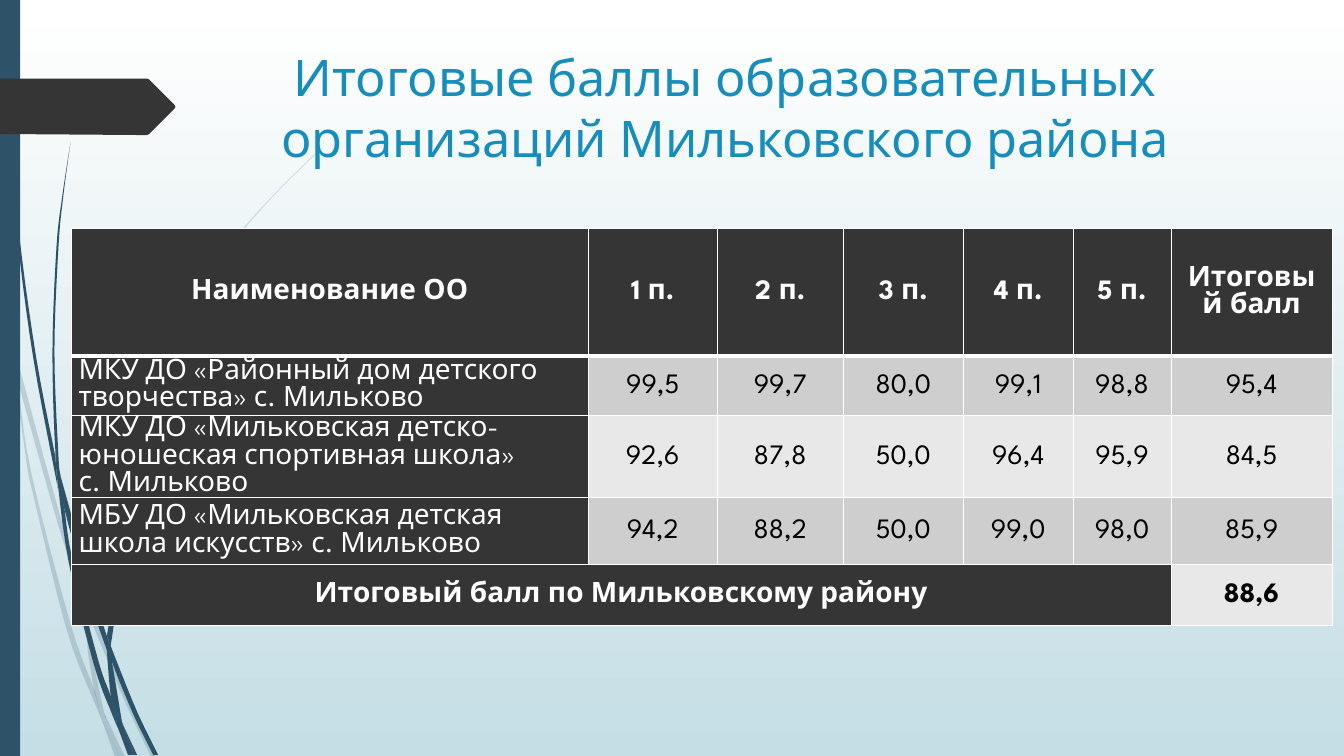
"""Build a slide with the final scores of the Milkovo district schools."""
import lxml.etree
import pptx
import pptx.dml.color
import pptx.enum.shapes
import pptx.enum.text
import pptx.oxml.ns
import pptx.util

Inches = pptx.util.Inches
Pt = pptx.util.Pt
RGBColor = pptx.dml.color.RGBColor
qn = pptx.oxml.ns.qn
CENTER = pptx.enum.text.PP_ALIGN.CENTER
LEFT = pptx.enum.text.PP_ALIGN.LEFT
MIDDLE = pptx.enum.text.MSO_ANCHOR.MIDDLE
TOP = pptx.enum.text.MSO_ANCHOR.TOP

FONT = "League Spartan"
WHITE = RGBColor(0xFF, 0xFF, 0xFF)
BLACK = RGBColor(0, 0, 0)
SKY = RGBColor(0xC5, 0xDE, 0xE5)
NAVY = RGBColor(0x2E, 0x53, 0x69)
BLUE = RGBColor(0x17, 0x8D, 0xBB)
DARK = RGBColor(0x35, 0x35, 0x35)
BANDS = (RGBColor(0xE8, 0xE8, 0xE8), RGBColor(0xCE, 0xCE, 0xCE))

PALE_STEMS = [
    ([(0, 2.82), (0.09, 3.22), (0.11, 3.5)], [(0.1, 3.44), (0, 2.99)]),
    ([(0.14, 3.45), (0.62, 5.2), (0.85, 5.86)], [(0.84, 5.99), (0.58, 5.22), (0.17, 3.76)]),
    ([(0.88, 5.96), (0.92, 6.07), (1.27, 6.92), (1.55, 7.51)],
     [(1.5, 7.51), (1.23, 6.94), (0.88, 6.1)]),
    ([(1.05, 7.11), (1.24, 7.51)], [(1.19, 7.51)]),
    ([(0.11, 3.5), (0.17, 3.76), (0.31, 4.69), (0.7, 6.19), (0.93, 6.83), (0.99, 7.07), (1.01, 7.14)],
     [(0.92, 6.93), (0.65, 6.21), (0.28, 4.7)]),
    ([(0.84, 5.99), (0.88, 6.08), (0.91, 6.46), (1.03, 7.06), (1.05, 7.11)],
     [(0.96, 6.92), (0.93, 6.83), (0.87, 6.46)]),
    ([(0.88, 5.96), (0.88, 5.84), (1.1, 4.62), (1.6, 3.49), (2.29, 2.45), (2.68, 1.98), (3.12, 1.54)],
     [(3.12, 1.53), (2.68, 1.97), (2.28, 2.44), (1.58, 3.48), (1.07, 4.61), (0.85, 5.84), (0.85, 5.86)]),
    ([(1.01, 7.14), (1.14, 7.51)], [(1.19, 7.51)]),
    ([(0.88, 6.1), (0.88, 5.96), (0.85, 5.86)], [(0.84, 5.99), (0.88, 6.08)]),
    ([(0.93, 6.83), (0.99, 7.07), (1.01, 7.14), (1.19, 7.51)], [(1.05, 7.11), (0.96, 6.92)]),
]
DARK_STEMS = [
    ([(0.03, 0), (0.04, 0.48), (0.07, 1.1), (0.17, 2.33), (0.33, 3.55), (0.56, 4.77), (0.57, 4.81)],
     [(0.55, 4.53), (0.36, 3.55), (0.19, 2.32), (0.08, 1.09), (0.05, 0.48), (0.04, 0)]),
    ([(0.6, 4.72), (0.64, 5.05), (0.88, 5.92), (1.06, 6.45)], [(1.06, 6.31), (0.93, 5.9), (0.6, 4.72)]),
    ([(1.1, 6.41), (1.11, 6.56), (1.32, 7.08), (1.52, 7.49)], [(1.57, 7.49), (1.36, 7.06), (1.13, 6.49)]),
    ([(0.57, 4.77), (0.68, 5.57), (0.93, 6.59), (1.11, 7.08), (1.17, 7.22)],
     [(1.16, 7.17), (1.1, 6.91), (0.98, 6.57), (0.72, 5.56), (0.64, 5.05)]),
    ([(0.6, 4.72), (0.58, 4.53), (0.54, 3.49), (0.58, 2.45), (0.63, 1.93), (0.7, 1.41)],
     [(0.7, 1.41), (0.62, 1.93), (0.56, 2.45), (0.52, 3.49), (0.55, 4.49), (0.6, 4.72)]),
    ([(1.22, 7.19), (1.33, 7.49)], [(1.36, 7.49)]),
    ([(0.55, 4.49), (0.57, 4.77), (0.64, 5.05)], [(0.6, 4.72)]),
    ([(1.1, 6.41), (1.11, 6.33), (1.25, 5.52), (1.58, 4.76), (2.05, 4.06), (2.31, 3.74), (2.61, 3.44)],
     [(2.6, 3.44), (2.31, 3.73), (2.04, 4.05), (1.56, 4.74), (1.22, 5.51), (1.06, 6.31)]),
    ([(1.17, 7.22), (1.27, 7.49)], [(1.31, 7.49)]),
    ([(1.06, 6.45), (1.1, 6.91), (1.16, 7.06), (1.22, 7.19)], [(1.21, 7.16), (1.11, 6.56), (1.09, 6.51)]),
    ([(1.06, 6.45), (1.11, 6.56), (1.1, 6.41)], [(1.06, 6.31)]),
    ([(1.1, 6.91), (1.16, 7.17), (1.17, 7.22), (1.3, 7.49)], [(1.33, 7.49), (1.22, 7.19), (1.16, 7.06)]),
]
ARROW_TAG = [(0, 0.78), (1.46, 0.78), (1.48, 0.79), (1.73, 1.04), (1.74, 1.06),
             (1.73, 1.08), (1.48, 1.33), (1.46, 1.34), (1.36, 1.34), (0, 1.33)]

TITLE = "Итоговые баллы образовательных организаций Мильковского района"
VILLAGE = chr(160).join(("с.", "Мильково"))
COLUMNS = (5.13, 1.28, 1.25, 1.19, 1.09, 0.97, 1.6)
ROWS = (1.26, 0.59, 0.82, 0.66, 0.61)
SCORES = [
    ["Наименование ОО", "1 п.", "2 п.", "3 п.", "4 п.", "5 п.", "Итоговый балл"],
    [f"МКУ ДО «Районный дом детского творчества» {VILLAGE}",
     "99,5", "99,7", "80,0", "99,1", "98,8", "95,4"],
    [f"МКУ ДО «Мильковская детско-юношеская спортивная школа» {VILLAGE}",
     "92,6", "87,8", "50,0", "96,4", "95,9", "84,5"],
    [f"МБУ ДО «Мильковская детская школа искусств» {VILLAGE}",
     "94,2", "88,2", "50,0", "99,0", "98,0", "85,9"],
    ["Итоговый балл по Мильковскому району", "", "", "", "", "", "88,6"],
]


def apply(target, values):
    """Set each named attribute of the target."""
    for name, value in values.items():
        setattr(target, name, value)


def smooth(points, steps=5):
    """Return points of a smooth curve through the given points."""
    padded = [points[0], *points, points[-1]]
    curve = []
    for a, b, c, d in zip(padded, padded[1:], padded[2:], padded[3:]):
        for step in range(steps):
            t = step / steps
            curve.append(tuple(
                q + t / 2 * (r - p + t * (2 * p - 5 * q + 4 * r - s + t * (3 * (q - r) + s - p)))
                for p, q, r, s in zip(a, b, c, d)))
    return curve + [points[-1]]


def paint(shape, color, opacity=100):
    """Give a shape a plain fill with no line or shadow."""
    shape.shadow.inherit = False
    shape.line.fill.background()
    shape.fill.solid()
    shape.fill.fore_color.rgb = color
    if opacity < 100:
        tint = shape._element.spPr.find(qn("a:solidFill"))[0]
        lxml.etree.SubElement(tint, qn("a:alpha"), val=str(opacity * 1000))


def add_outline(page, points, color, opacity=100):
    """Draw a closed filled outline."""
    corners = [(Inches(x), Inches(y)) for x, y in points]
    builder = page.shapes.build_freeform(*corners[0])
    builder.add_line_segments(corners[1:], close=True)
    paint(builder.convert_to_shape(), color, opacity)


def write(frame, text, align, color, font, spacing=None):
    """Write one formatted paragraph into a text frame."""
    para = frame.paragraphs[0]
    apply(para, {"alignment": align, "line_spacing": spacing})
    span = para.add_run()
    span.text = text
    apply(span.font, {"name": FONT, **font})
    span.font.color.rgb = color


def add_title(page):
    """Add the slide title."""
    box = page.shapes.add_textbox(Inches(2.32), Inches(0.41), Inches(9.75), Inches(1.4))
    apply(box.text_frame, {"word_wrap": True, "vertical_anchor": TOP})
    write(box.text_frame, TITLE, CENTER, BLUE, {"size": Pt(36)})


def add_borders(cell, widths):
    """Put white lines round a cell."""
    props = cell._tc.get_or_add_tcPr()
    for index, (side, width) in enumerate(widths.items()):
        line = lxml.etree.Element(qn("a:ln" + side), w=str(Pt(width)))
        fill = lxml.etree.SubElement(line, qn("a:solidFill"))
        lxml.etree.SubElement(fill, qn("a:srgbClr"), val=str(WHITE))
        props.insert(index, line)


def add_scores(page):
    """Add the table of scores."""
    table = page.shapes.add_table(len(ROWS), len(COLUMNS), Inches(0.71), Inches(2.27),
                                  Inches(sum(COLUMNS)), Inches(sum(ROWS))).table
    for column, width in zip(table.columns, COLUMNS):
        column.width = Inches(width)
    last = len(ROWS) - 1
    for r, texts in enumerate(SCORES):
        table.rows[r].height = Inches(ROWS[r])
        for c, text in enumerate(texts):
            cell = table.cell(r, c)
            dark = r == 0 or c == 0
            school = c == 0 and 0 < r < last
            apply(cell, {"vertical_anchor": MIDDLE, "margin_left": Inches(0.07),
                         "margin_right": Inches(0.08), "margin_top": 0, "margin_bottom": 0})
            cell.fill.solid()
            cell.fill.fore_color.rgb = DARK if dark else BANDS[r % 2]
            add_borders(cell, {"L": 1, "R": 1, "T": 3 if r == 1 else 1, "B": 3 if r == 0 else 1})
            if text:
                write(cell.text_frame, text, LEFT if school else CENTER, WHITE if dark else BLACK,
                      {"size": Pt(20), "bold": r in (0, last)}, Pt(19.6) if school else 1.07)
    table.cell(last, 0).merge(table.cell(last, len(COLUMNS) - 2))


def add_background(page):
    """Fill the page from white at the top to pale blue at the bottom."""
    fill = page.background.fill
    fill.gradient()
    fill.gradient_angle = 270
    for stop, color, position in zip(fill.gradient_stops, (WHITE, SKY), (0, 1)):
        stop.color.rgb = color
        stop.position = position


def main():
    """Build and save the deck."""
    deck = pptx.Presentation()
    apply(deck, {"slide_width": Inches(13.33), "slide_height": Inches(7.5)})
    page = deck.slides.add_slide(deck.slide_layouts[6])
    add_background(page)
    for stems, opacity in ((PALE_STEMS, 20), (DARK_STEMS, 100)):
        for there, back in stems:
            add_outline(page, smooth(there) + smooth(back), NAVY, opacity)
    strip = page.shapes.add_shape(pptx.enum.shapes.MSO_SHAPE.RECTANGLE, 0, 0, Inches(0.2), Inches(7.5))
    paint(strip, NAVY)
    add_outline(page, ARROW_TAG, DARK)
    add_title(page)
    add_scores(page)
    deck.save("out.pptx")


if __name__ == "__main__":
    main()
